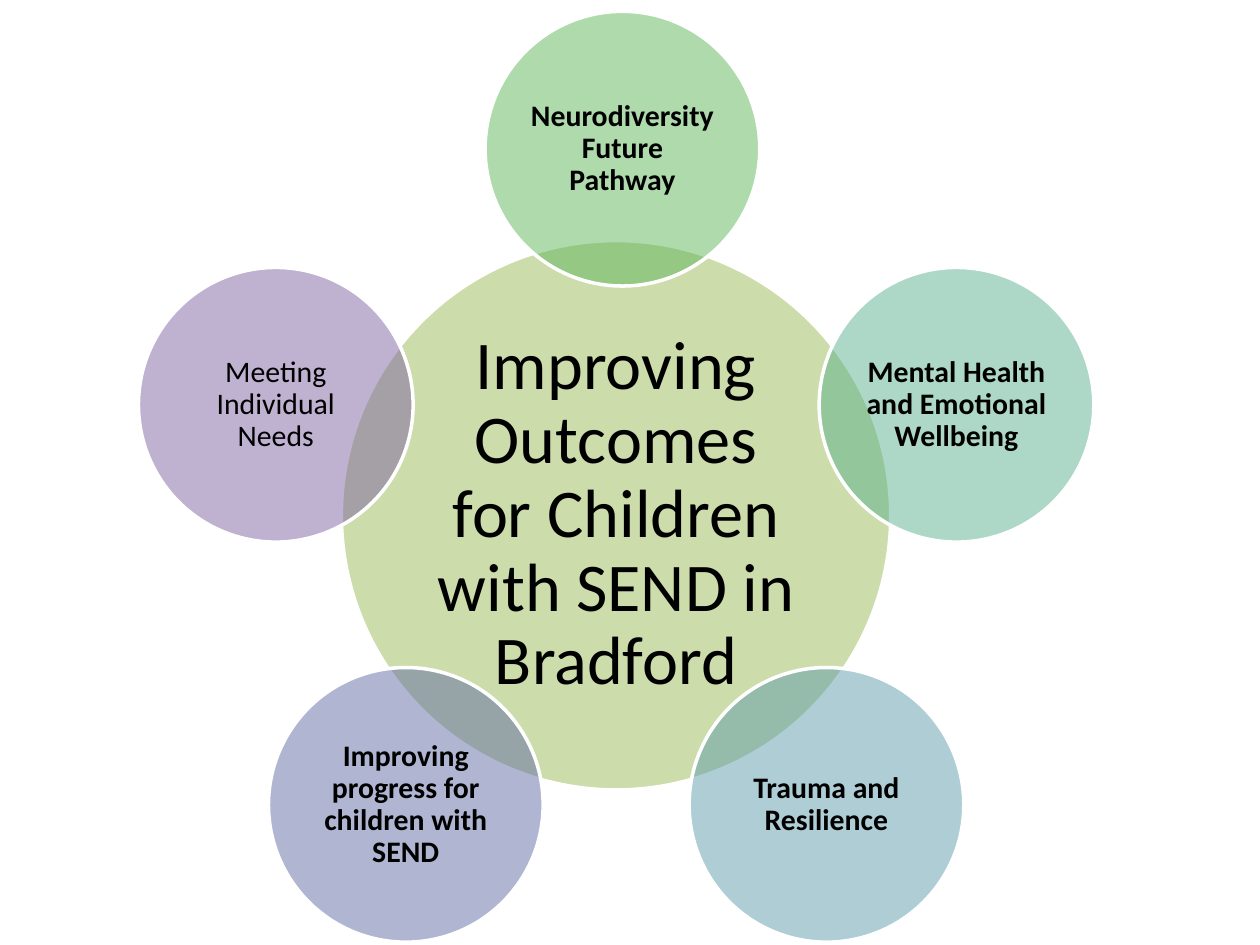
"""Build a radial Venn slide: one hub circle with five circles around it."""
from dataclasses import dataclass
from math import cos, radians, sin

from lxml import etree
from pptx import Presentation
from pptx.dml.color import RGBColor
from pptx.enum.shapes import MSO_SHAPE
from pptx.enum.text import MSO_ANCHOR, PP_ALIGN
from pptx.oxml.ns import qn
from pptx.util import Inches, Pt

OVAL = MSO_SHAPE.OVAL
MIDDLE = MSO_ANCHOR.MIDDLE
CENTER = PP_ALIGN.CENTER

WHITE = RGBColor(0xFF, 0xFF, 0xFF)
BLACK = RGBColor(0x00, 0x00, 0x00)
OLIVE = RGBColor(0x9B, 0xBB, 0x59)
GREEN = RGBColor(0x5F, 0xB6, 0x5B)
MINT = RGBColor(0x5D, 0xB1, 0x8E)
TEAL = RGBColor(0x5F, 0x9D, 0xAC)
INDIGO = RGBColor(0x62, 0x6E, 0xA7)
PURPLE = RGBColor(0x80, 0x64, 0xA2)

SLIDE_W, SLIDE_H = Inches(10), Inches(7.5)
PERCENT = SLIDE_W / 100
HUB_X, HUB_Y = 48.9, 40.9
HUB_SIZE, THEME_SIZE, RING_RADIUS = 43.6, 21.8, 28.4


@dataclass(frozen=True)
class Theme:
    """One outer circle, with any shift from its ring position in percent."""
    text: str
    color: RGBColor
    bold: bool = True
    dx: float = 0
    dy: float = 0


THEMES = [
    Theme("Neurodiversity Future Pathway", GREEN, dx=0.5, dy=-0.7),
    Theme("Mental Health and Emotional Wellbeing", MINT),
    Theme("Trauma and Resilience", TEAL),
    Theme("Improving progress for children with SEND", INDIGO),
    Theme("Meeting Individual Needs", PURPLE, bold=False),
]


def add_circle(slide, x: float, y: float, size: float, text: str, color: RGBColor,
               font_size: float, inset: float, bold: bool) -> None:
    """Draw a half-transparent circle centred on x, y, in percent of slide width."""
    side = round(size * PERCENT)
    sp = slide.shapes.add_shape(OVAL, round((x - size / 2) * PERCENT),
                                round((y - size / 2) * PERCENT), side, side)
    sp.shadow.inherit = False
    sp.fill.solid()
    sp.fill.fore_color.rgb = color
    srgb = sp.fill._xPr.find(qn("a:solidFill")).find(qn("a:srgbClr"))
    etree.SubElement(srgb, qn("a:alpha"), val="50000")
    sp.line.color.rgb = WHITE
    sp.line.width = Pt(2)
    tf = sp.text_frame
    tf.word_wrap = True
    tf.vertical_anchor = MIDDLE
    tf.margin_left = tf.margin_right = tf.margin_top = tf.margin_bottom = Inches(inset)
    tf.text = text
    p = tf.paragraphs[0]
    p.alignment = CENTER
    p.line_spacing = 0.9
    font = p.runs[0].font
    font.name = "Calibri"
    font.size = Pt(font_size)
    font.bold = bold
    font.color.rgb = BLACK


def main() -> None:
    """Build and save the slide."""
    prs = Presentation()
    prs.slide_width, prs.slide_height = SLIDE_W, SLIDE_H
    s = prs.slides.add_slide(prs.slide_layouts[6])
    add_circle(s, HUB_X, HUB_Y, HUB_SIZE,
               "Improving Outcomes for Children with SEND in Bradford",
               OLIVE, 39, 0.05, False)
    for i, theme in enumerate(THEMES):
        angle = radians(i * 360 / len(THEMES))
        add_circle(s, HUB_X + RING_RADIUS * sin(angle) + theme.dx,
                   HUB_Y - RING_RADIUS * cos(angle) + theme.dy,
                   THEME_SIZE, theme.text, theme.color, 17, 0.02, theme.bold)
    prs.save("out.pptx")


if __name__ == "__main__":
    main()
